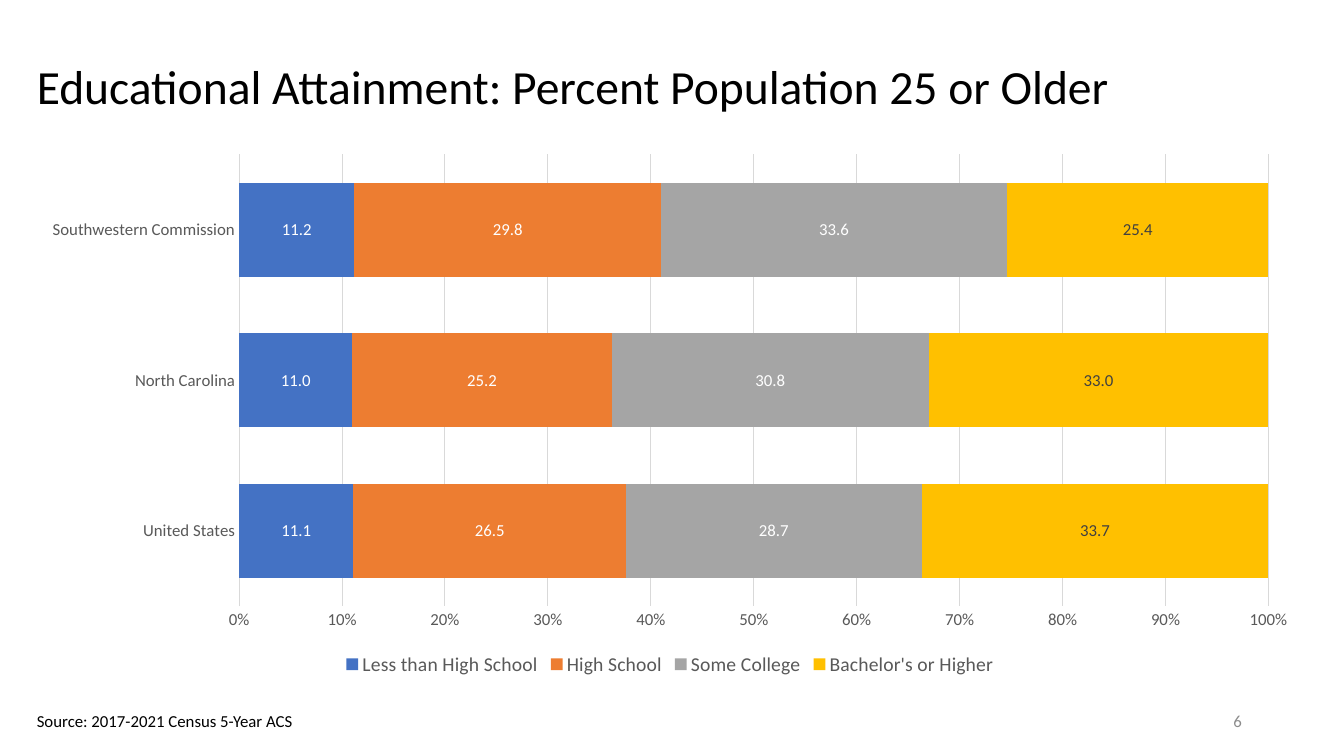
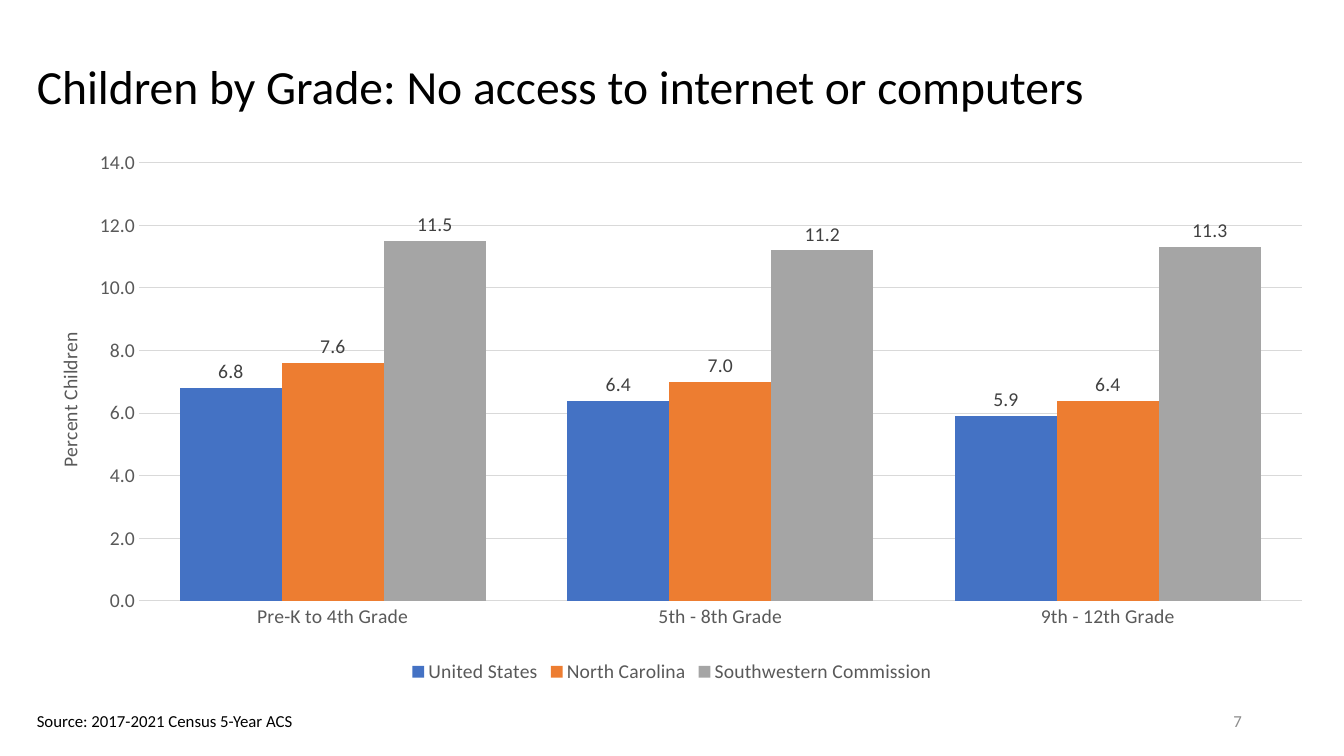
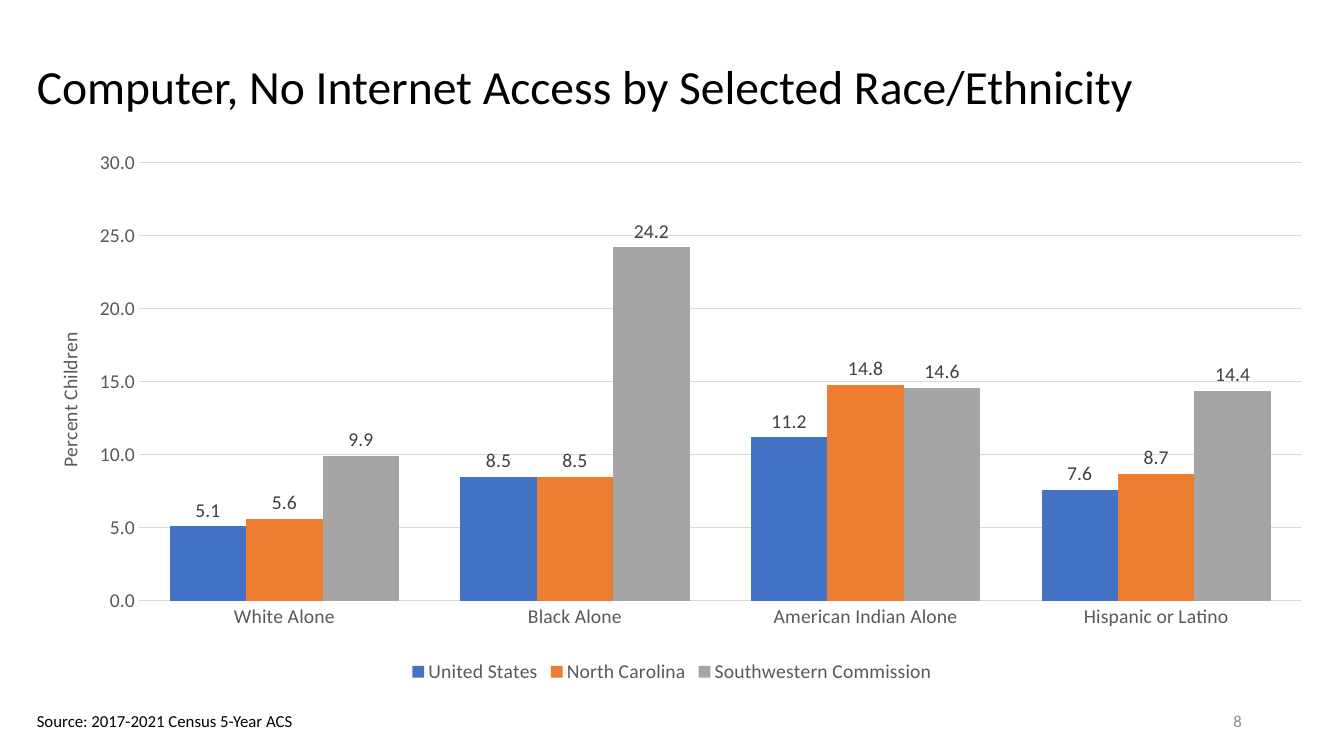
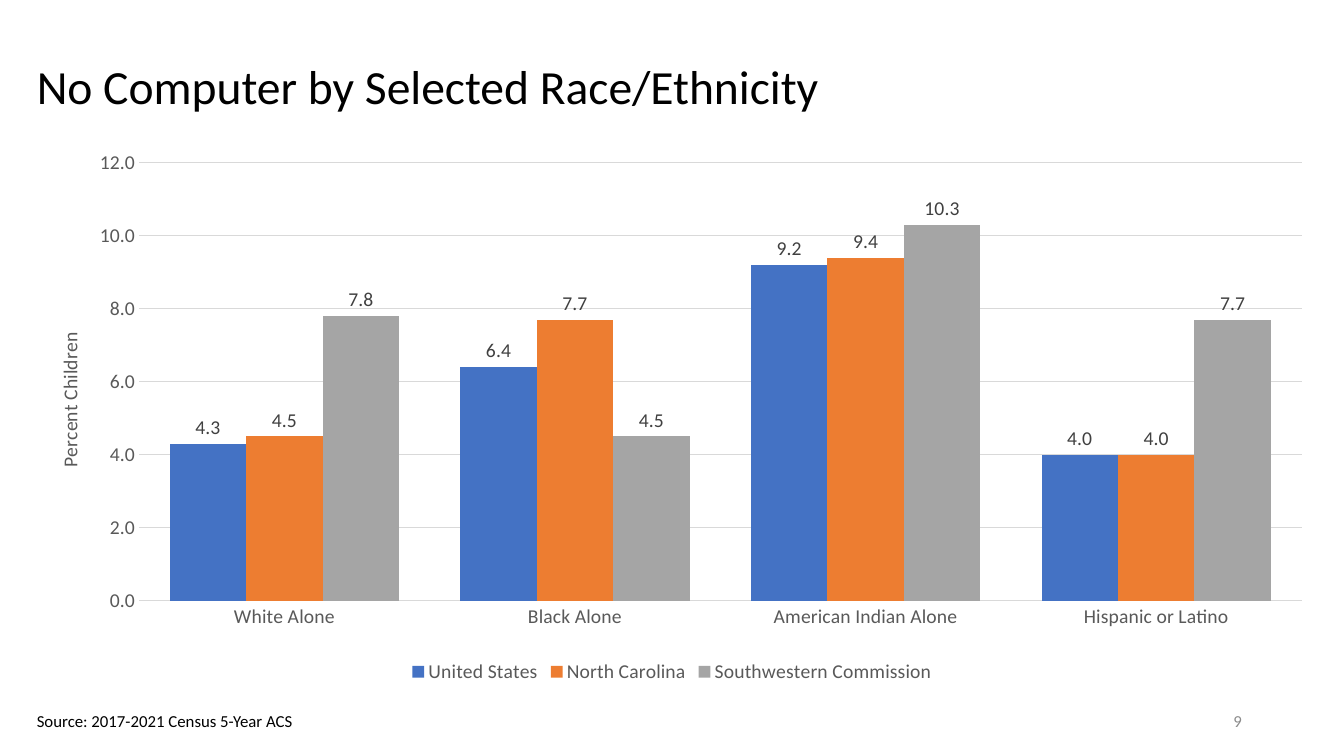
from lxml import etree
from pptx import Presentation
from pptx.chart.data import CategoryChartData
from pptx.dml.color import RGBColor
from pptx.enum.chart import XL_CHART_TYPE, XL_LABEL_POSITION, XL_LEGEND_POSITION, XL_TICK_MARK
from pptx.enum.text import MSO_ANCHOR, MSO_AUTO_SIZE, PP_ALIGN
from pptx.oxml.ns import qn
from pptx.util import Inches, Pt

COLUMNS = XL_CHART_TYPE.COLUMN_CLUSTERED
STACKED_BARS = XL_CHART_TYPE.BAR_STACKED_100
LABEL_CENTER = XL_LABEL_POSITION.CENTER
LABEL_ABOVE = XL_LABEL_POSITION.OUTSIDE_END
LEGEND_BOTTOM = XL_LEGEND_POSITION.BOTTOM
NO_TICK = XL_TICK_MARK.NONE
TOP, MIDDLE = MSO_ANCHOR.TOP, MSO_ANCHOR.MIDDLE
LEFT, RIGHT = PP_ALIGN.LEFT, PP_ALIGN.RIGHT

COLORS = {
    "title": "000000", "number": "8C8C8C", "axis": "595959", "grid": "D9D9D9",
    "dark": "404040", "light": "FFFFFF",
    "blue": "4472C4", "orange": "ED7D31", "gray": "A5A5A5", "gold": "FFC000",
}
SERIES_COLORS = ["blue", "orange", "gray", "gold"]
FONT = "Calibri"
VALUE_FORMAT = "#,##0.0"
SOURCE = "Source: 2017-2021 Census 5-Year ACS"
REGIONS = ["United States", "North Carolina", "Southwestern Commission"]
GROUPS = ["White Alone", "Black Alone", "American Indian Alone", "Hispanic or Latino"]

# Areas as left, top, width, height in percent of the slide
TITLE_AREA = (2, 4.5, 95.7, 14.5)
BARS_AREA = (2, 19, 95.7, 71)
COLUMNS_AREA = (2, 19, 96, 72)
NUMBER_AREA = (70.65, 92.67, 22.5, 5.33)
SOURCE_AREA = (2, 93.33, 20.85, 4)


def color(name):
    return RGBColor.from_string(COLORS[name])


def set_layout(parent, index, **shares):
    """Place a chart part by shares of the chart's size."""
    for old_layout in parent.findall(qn("c:layout")):
        parent.remove(old_layout)
    layout = etree.Element(qn("c:layout"))
    manual = etree.SubElement(layout, qn("c:manualLayout"))
    if "w" in shares:
        etree.SubElement(manual, qn("c:layoutTarget")).set("val", "inner")
    for side in ("x", "y"):
        etree.SubElement(manual, qn(f"c:{side}Mode")).set("val", "edge")
    for key, share in shares.items():
        etree.SubElement(manual, qn(f"c:{key}")).set("val", str(share))
    parent.insert(index, layout)


class Deck:
    def __init__(self):
        self.presentation = Presentation()
        self.presentation.slide_width = Inches(13.33)
        self.presentation.slide_height = Inches(7.5)
        self.slide = None

    def area(self, left, top, width, height):
        across = self.presentation.slide_width / 100
        down = self.presentation.slide_height / 100
        return [int(length) for length in
                (left * across, top * down, width * across, height * down)]

    def style_font(self, font, size, color_name):
        font.name = FONT
        font.size = Pt(size)
        font.bold = False
        font.color.rgb = color(color_name)

    def text(self, area, words, size, color_name, anchor=MIDDLE, align=LEFT, wrap=True):
        frame = self.slide.shapes.add_textbox(*self.area(*area)).text_frame
        frame.word_wrap = wrap
        frame.auto_size = MSO_AUTO_SIZE.NONE if wrap else MSO_AUTO_SIZE.SHAPE_TO_FIT_TEXT
        frame.vertical_anchor = anchor
        paragraph = frame.paragraphs[0]
        paragraph.alignment = align
        run = paragraph.add_run()
        run.text = words
        self.style_font(run.font, size, color_name)
        return paragraph

    def new_slide(self, title, number):
        """Add a slide with its title, source line and number."""
        self.slide = self.presentation.slides.add_slide(self.presentation.slide_layouts[6])
        self.text(TITLE_AREA, title, 34, "title").line_spacing = 0.9
        self.text(NUMBER_AREA, str(number), 12, "number", align=RIGHT)
        self.text(SOURCE_AREA, SOURCE, 12, "title", anchor=TOP, wrap=False)

    def chart(self, kind, area, categories, series, size, gap, label_colors, label_position):
        data = CategoryChartData(number_format=VALUE_FORMAT)
        data.categories = categories
        for name, values in series.items():
            data.add_series(name, values)
        chart = self.slide.shapes.add_chart(kind, *self.area(*area), data).chart
        self.style_font(chart.font, size, "axis")
        chart.has_title = False

        # Legend
        chart.has_legend = True
        chart.legend.position = LEGEND_BOTTOM
        chart.legend.include_in_layout = False
        self.style_font(chart.legend.font, 14, "axis")

        # Axes
        for axis in (chart.category_axis, chart.value_axis):
            axis.major_tick_mark = axis.minor_tick_mark = NO_TICK
            self.style_font(axis.tick_labels.font, size, "axis")
        chart.value_axis.format.line.fill.background()
        chart.value_axis.has_major_gridlines = True
        for line in (chart.category_axis.format.line,
                     chart.value_axis.major_gridlines.format.line):
            line.color.rgb = color("grid")
            line.width = Pt(0.75)

        # Series and their labels
        plot = chart.plots[0]
        plot.gap_width = gap
        plot.vary_by_categories = False
        for item, fill_name, label_color in zip(plot.series, SERIES_COLORS, label_colors):
            item.format.fill.solid()
            item.format.fill.fore_color.rgb = color(fill_name)
            item.invert_if_negative = False
            labels = item.data_labels
            labels.show_value = True
            labels.number_format = VALUE_FORMAT
            labels.number_format_is_linked = False
            labels.position = label_position
            self.style_font(labels.font, size, label_color)
        return chart

    def stacked_bars(self, categories, series):
        chart = self.chart(STACKED_BARS, BARS_AREA, categories, series, 12, 60,
                           ["light"] * 3 + ["dark"], LABEL_CENTER)
        chart.plots[0].overlap = 100
        chart.value_axis.tick_labels.number_format = "0%"
        chart.value_axis.tick_labels.number_format_is_linked = False

    def columns(self, categories, rows):
        chart = self.chart(COLUMNS, COLUMNS_AREA, categories, dict(zip(REGIONS, rows)),
                           14, 80, ["dark"] * 3, LABEL_ABOVE)
        chart.plots[0].overlap = 0
        axis = chart.value_axis
        axis.tick_labels.number_format = VALUE_FORMAT
        axis.tick_labels.number_format_is_linked = False
        run = axis.axis_title.text_frame.paragraphs[0].add_run()
        run.text = "Percent Children"
        self.style_font(run.font, 14, "axis")

        # Upright axis title and fixed plot area
        title = axis._element.find(qn("c:title"))
        body = title.find(".//" + qn("a:bodyPr"))
        body.set("rot", "-5400000")
        body.set("vert", "horz")
        set_layout(title, 1, x=0.02, y=0.34)
        plot_area = chart._chartSpace.find(".//" + qn("c:plotArea"))
        set_layout(plot_area, 0, x=0.087, y=0.035, w=0.901, h=0.805)


def main():
    deck = Deck()

    # Educational attainment
    deck.new_slide("Educational Attainment: Percent Population 25 or Older", 6)
    deck.stacked_bars(REGIONS, {
        "Less than High School": [11.1, 11, 11.2],
        "High School": [26.5, 25.2, 29.8],
        "Some College": [28.7, 30.8, 33.6],
        "Bachelor's or Higher": [33.7, 33, 25.4],
    })

    # Access by grade and by group: one row of values per region
    column_slides = [
        ("Children by Grade: No access to internet or computers",
         ["Pre-K to 4th Grade", "5th - 8th Grade", "9th - 12th Grade"],
         [[6.8, 6.4, 5.9], [7.6, 7, 6.4], [11.5, 11.2, 11.3]]),
        ("Computer, No Internet Access by Selected Race/Ethnicity", GROUPS,
         [[5.1, 8.5, 11.2, 7.6], [5.6, 8.5, 14.8, 8.7], [9.9, 24.2, 14.6, 14.4]]),
        ("No Computer by Selected Race/Ethnicity", GROUPS,
         [[4.3, 6.4, 9.2, 4], [4.5, 7.7, 9.4, 4], [7.8, 4.5, 10.3, 7.7]]),
    ]
    for number, (title, categories, rows) in enumerate(column_slides, start=7):
        deck.new_slide(title, number)
        deck.columns(categories, rows)

    deck.presentation.save("out.pptx")


if __name__ == "__main__":
    main()
